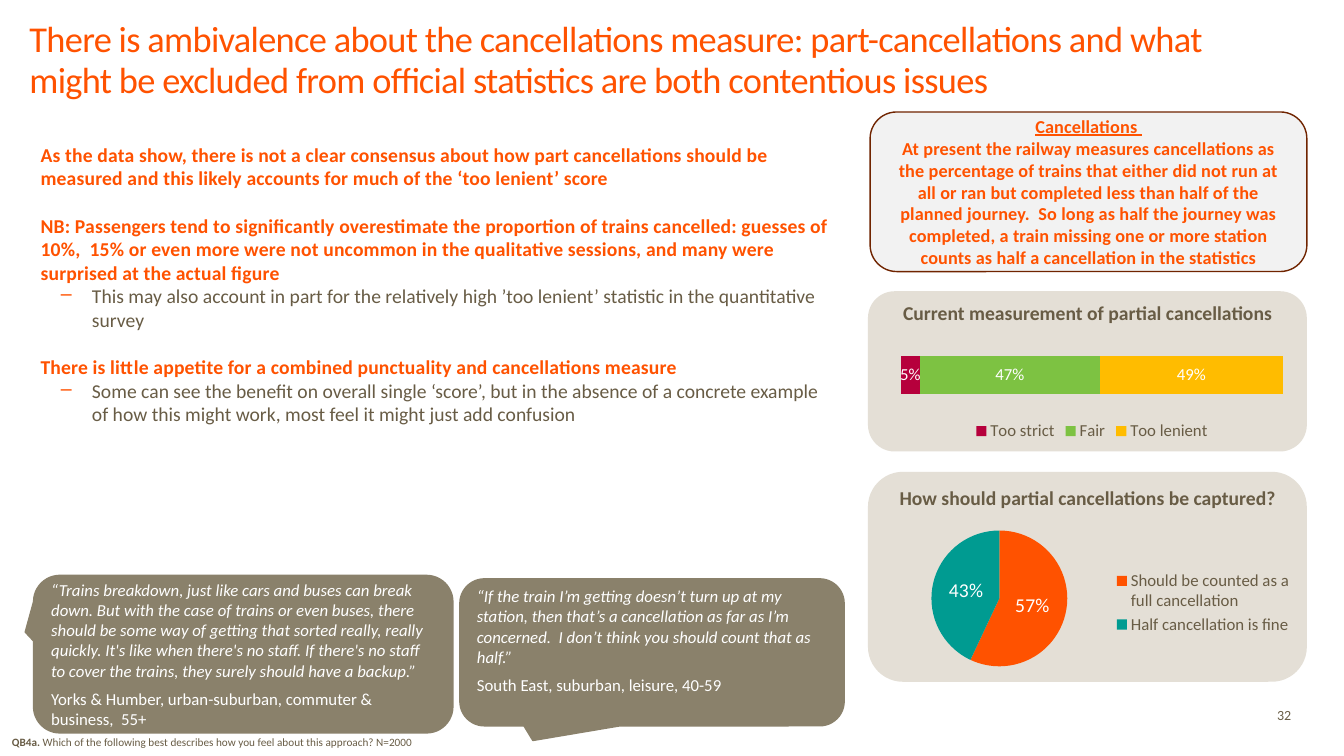
from lxml.etree import SubElement
from pptx import Presentation
from pptx.chart.data import CategoryChartData
from pptx.dml.color import RGBColor
from pptx.enum.chart import XL_CHART_TYPE, XL_LABEL_POSITION, XL_LEGEND_POSITION
from pptx.enum.shapes import MSO_SHAPE
from pptx.enum.text import MSO_ANCHOR, PP_ALIGN
from pptx.oxml.ns import qn
from pptx.util import Pt

ORANGE, BROWN, WHITE = "FF5200", "685C45", "FFFFFF"
PANEL, OLIVE = "E4DFD6", "8A816B"


def color(value):
    return RGBColor.from_string(value)


class SlideBuilder:
    font = "Calibri"

    def __init__(self, slide):
        self.slide = slide

    def style(self, font, size, fill, bold=False, italic=False):
        font.name, font.size = self.font, Pt(size)
        font.bold, font.italic = bold, italic
        font.color.rgb = color(fill)

    def paragraph(self, frame, text, size, fill, bold=False, italic=False,
                  align=PP_ALIGN.LEFT, spacing=0, first=False):
        paragraph = frame.paragraphs[0] if first else frame.add_paragraph()
        paragraph.text = text
        paragraph.alignment = align
        for run in paragraph.runs:
            self.style(run.font, size, fill, bold, italic)
            if spacing:
                run.font._element.set("spc", str(round(spacing * 100)))
        return paragraph

    def text_box(self, left, top, width, height, anchor=MSO_ANCHOR.TOP):
        shape = self.slide.shapes.add_textbox(Pt(left), Pt(top), Pt(width), Pt(height))
        frame = shape.text_frame
        frame.word_wrap = True
        frame.vertical_anchor = anchor
        frame.margin_left = frame.margin_top = frame.margin_right = frame.margin_bottom = 0
        return frame

    def label(self, left, top, width, height, text, size, fill, anchor=MSO_ANCHOR.TOP, **options):
        frame = self.text_box(left, top, width, height, anchor)
        return self.paragraph(frame, text, size, fill, first=True, **options)

    def box(self, kind, left, top, width, height, fill, line=None):
        shape = self.slide.shapes.add_shape(kind, Pt(left), Pt(top), Pt(width), Pt(height))
        shape.shadow.inherit = False
        shape.fill.solid()
        shape.fill.fore_color.rgb = color(fill)
        if line:
            shape.line.color.rgb = color(line)
            shape.line.width = Pt(1)
        else:
            shape.line.fill.background()
        shape.text_frame.word_wrap = True
        return shape

    def callout(self, left, top, width, height, tip, quote, speaker):
        shape = self.box(MSO_SHAPE.ROUNDED_RECTANGULAR_CALLOUT, left, top, width, height, OLIVE, OLIVE)
        shape.adjustments[0], shape.adjustments[1] = tip
        frame = shape.text_frame
        for text, is_quote in ((quote, True), (speaker, False)):
            paragraph = self.paragraph(frame, text, 12, WHITE, italic=is_quote, first=is_quote)
            paragraph.space_after = Pt(5.5)
        return frame

    def dash(self, paragraph):
        properties = paragraph._p.get_or_add_pPr()
        properties.set("marL", str(Pt(36.7)))
        properties.set("indent", str(Pt(-22.3)))
        bullet_color = SubElement(properties, qn("a:buClr"))
        SubElement(bullet_color, qn("a:srgbClr")).set("val", ORANGE)
        SubElement(properties, qn("a:buChar")).set("char", "–")

    def chart(self, kind, left, top, width, height, categories, series, legend):
        data = CategoryChartData(number_format="0%")
        data.categories = categories
        for name, values in series:
            data.add_series(name, values)
        chart = self.slide.shapes.add_chart(
            kind, Pt(left), Pt(top), Pt(width), Pt(height), data).chart
        chart.has_title = False
        self.style(chart.font, 10, BROWN)
        chart.has_legend = True
        chart.legend.position = legend
        chart.legend.include_in_layout = False
        self.style(chart.legend.font, 12, BROWN)
        chart.plots[0].vary_by_categories = kind == XL_CHART_TYPE.PIE
        return chart

    def value_labels(self, series, size):
        labels = series.data_labels
        labels.show_value = True
        labels.number_format, labels.number_format_is_linked = "0%", False
        labels.position = XL_LABEL_POSITION.CENTER
        self.style(labels.font, size, WHITE)

    def place(self, parent, x, y, w, h, inner=False):
        """Set a manual layout, in fractions of the chart area."""
        for old in parent.findall(qn("c:layout")):
            parent.remove(old)
        layout = parent.makeelement(qn("c:layout"), {})
        parent.insert(1 if parent.tag == qn("c:legend") else 0, layout)
        manual = SubElement(layout, qn("c:manualLayout"))
        parts = [("layoutTarget", "inner")] if inner else []
        parts += [("xMode", "edge"), ("yMode", "edge"), ("x", x), ("y", y), ("w", w), ("h", h)]
        for name, value in parts:
            SubElement(manual, qn("c:" + name)).set("val", str(value))


def main():
    presentation = Presentation()
    presentation.slide_width, presentation.slide_height = Pt(960), Pt(540)
    slide = presentation.slides.add_slide(presentation.slide_layouts[6])
    builder = SlideBuilder(slide)

    # Title and page number
    title = builder.label(
        21, 13, 884, 59,
        "There is ambivalence about the cancellations measure: part-cancellations and what might be "
        "excluded from official statistics are both contentious issues",
        26, ORANGE, MSO_ANCHOR.BOTTOM, spacing=-0.5)
    title.line_spacing = Pt(29)
    builder.label(905, 502.5, 17.3, 16, "32", 10, BROWN, MSO_ANCHOR.MIDDLE, align=PP_ALIGN.RIGHT)

    # Definition box
    definition = builder.box(MSO_SHAPE.ROUNDED_RECTANGLE, 621.5, 80, 312, 114, "F2F2F2", "702400")
    frame = definition.text_frame
    heading = builder.paragraph(frame, "Cancellations ", 13, ORANGE, bold=True,
                                align=PP_ALIGN.CENTER, spacing=0.1, first=True)
    heading.runs[0].font.underline = True
    builder.paragraph(
        frame,
        "At present the railway measures cancellations as the percentage of trains that either did not "
        "run at all or ran but completed less than half of the planned journey.  So long as half the "
        "journey was completed, a train missing one or more station counts as half a cancellation in "
        "the statistics",
        13, ORANGE, bold=True, align=PP_ALIGN.CENTER, spacing=0.1)

    # Findings: each statement with its optional dashed point
    findings = [
        ("As the data show, there is not a clear consensus about how part cancellations should be "
         "measured and this likely accounts for much of the ‘too lenient’ score", None),
        ("NB: Passengers tend to significantly overestimate the proportion of trains cancelled: guesses "
         "of 10%,  15% or even more were not uncommon in the qualitative sessions, and many were "
         "surprised at the actual figure",
         "This may also account in part for the relatively high ’too lenient’ statistic in the "
         "quantitative survey"),
        ("There is little appetite for a combined punctuality and cancellations measure",
         "Some can see the benefit on overall single ‘score’, but in the absence of a concrete example "
         "of how this might work, most feel it might just add confusion"),
    ]
    frame = builder.text_box(29, 102, 566, 280)
    for index, (statement, point) in enumerate(findings):
        paragraph = builder.paragraph(frame, statement, 14, ORANGE, bold=True, spacing=0.1,
                                      first=index == 0)
        if index:
            paragraph.space_before = Pt(17)
        if point:
            builder.dash(builder.paragraph(frame, point, 14, BROWN))

    # Chart panels with headings
    panels = [
        (208, 114.5, 215, "Current measurement of partial cancellations"),
        (337, 150, 347, "How should partial cancellations be captured?"),
    ]
    for top, height, heading_top, text in panels:
        builder.box(MSO_SHAPE.ROUNDED_RECTANGLE, 620, top, 313.5, height, PANEL)
        builder.label(621.5, heading_top, 311, 27, text, 14, BROWN, bold=True, align=PP_ALIGN.CENTER)

    # Stacked bar of current measurement
    ratings = [("Too strict", 0.05, "B6003C"), ("Fair", 0.47, "7DC242"), ("Too lenient", 0.49, "FFBC00")]
    chart = builder.chart(XL_CHART_TYPE.BAR_STACKED, 643, 233, 273.5, 85, ["1"],
                          [(name, [value]) for name, value, _ in ratings], XL_LEGEND_POSITION.BOTTOM)
    plot = chart.plots[0]
    plot.gap_width, plot.overlap = 100, 100
    chart.value_axis.minimum_scale, chart.value_axis.maximum_scale = 0, 1
    for axis in (chart.value_axis, chart.category_axis):
        axis.has_major_gridlines = False
        axis.visible = False
    for series, (_, _, fill) in zip(plot.series, ratings):
        series.format.fill.solid()
        series.format.fill.fore_color.rgb = color(fill)
        builder.value_labels(series, 12)
    builder.place(chart._chartSpace.chart.plotArea, 0, 0.09, 1, 0.64, inner=True)

    # Pie of how to capture partial cancellations
    chart = builder.chart(XL_CHART_TYPE.PIE, 621.5, 342, 313, 150,
                          ["Should be counted as a full cancellation", "Half cancellation is fine"],
                          [("Series 1", [0.57, 0.43])], XL_LEGEND_POSITION.RIGHT)
    series = chart.plots[0].series[0]
    for index, fill in enumerate((ORANGE, "009B91")):
        point = series.points[index]
        point.format.fill.solid()
        point.format.fill.fore_color.rgb = color(fill)
    builder.value_labels(series, 14)
    builder.place(chart._chartSpace.chart.plotArea, 0.14, 0.24, 0.31, 0.66, inner=True)
    builder.place(chart.legend._element, 0.55, 0.42, 0.42, 0.34)

    # Passenger quotes
    builder.callout(
        24, 411, 299.5, 112.5, (-0.52, -0.14),
        "“Trains breakdown, just like cars and buses can break down. But with the case of trains or even "
        "buses, there should be some way of getting that sorted really, really quickly. It's like when "
        "there's no staff. If there's no staff to cover the trains, they surely should have a backup.”",
        "Yorks & Humber, urban-suburban, commuter & business,  55+")
    frame = builder.callout(
        328.5, 413.5, 274.5, 105, (-0.31, 0.6),
        "“If the train I’m getting doesn’t turn up at my station, then that’s a cancellation as far as "
        "I’m concerned.  I don’t think you should count that as half.”",
        "South East, suburban, leisure, 40-59")
    frame.vertical_anchor = MSO_ANCHOR.TOP
    frame.margin_top = 0

    # Survey question
    question = builder.label(8.5, 525, 439, 15, "QB4a. ", 8, BROWN, bold=True)
    run = question.add_run()
    run.text = "Which of the following best describes how you feel about this approach? N=2000"
    builder.style(run.font, 8, BROWN)

    presentation.save("out.pptx")


if __name__ == "__main__":
    main()
